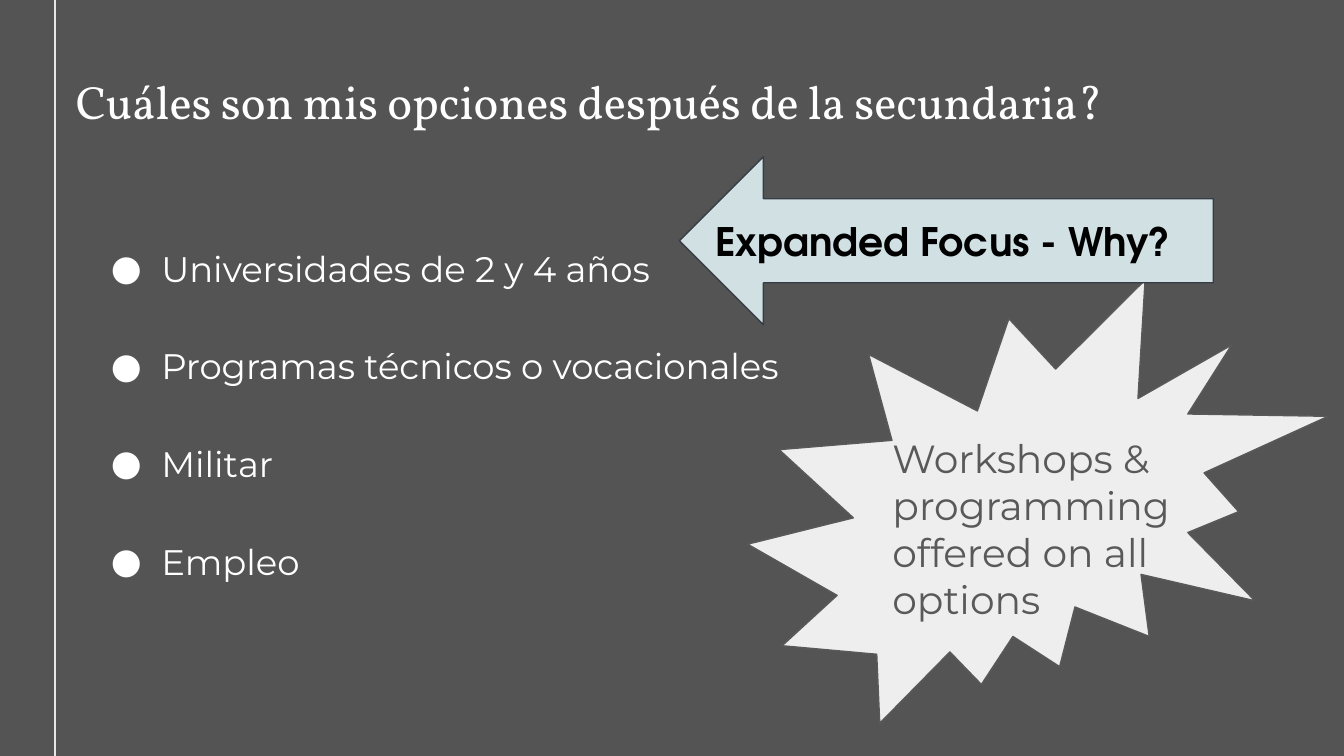
from lxml.etree import SubElement
from pptx import Presentation
from pptx.dml.color import RGBColor
from pptx.enum.shapes import MSO_CONNECTOR, MSO_SHAPE
from pptx.enum.text import MSO_ANCHOR, MSO_AUTO_SIZE, PP_ALIGN
from pptx.oxml.ns import qn
from pptx.util import Pt

HUES = {
    "back": "545454",
    "rule": "E6E6E4",
    "light": "FFFFFF",
    "burst": "EEEEEE",
    "grey": "595959",
    "arrow": "D0E0E3",
    "edge": "363D46",
    "dark": "000000",
}
ITEMS = [
    "Universidades de 2 y 4 años",
    "Programas técnicos o vocacionales",
    "Militar",
    "Empleo",
]


def tint(name):
    return RGBColor.from_string(HUES[name])


def place(shape, left, top, width, height):
    shape.left, shape.top = Pt(left), Pt(top)
    shape.width, shape.height = Pt(width), Pt(height)


def set_frame(shape, inset):
    frame = shape.text_frame
    frame.word_wrap = True
    frame.auto_size = MSO_AUTO_SIZE.NONE
    frame.vertical_anchor = MSO_ANCHOR.TOP
    frame.margin_left = frame.margin_right = Pt(inset)
    frame.margin_top = frame.margin_bottom = Pt(inset)
    return frame


def style(line, face, size, hue, bold=False):
    line.alignment = PP_ALIGN.LEFT
    for run in line.runs:
        font = run.font
        font.name, font.size, font.bold = face, Pt(size), bold
        font.color.rgb = tint(hue)


def add_bullet(line):
    props = line._p.get_or_add_pPr()
    props.set("marL", str(Pt(36)))
    props.set("indent", str(-Pt(27)))
    color = SubElement(props, qn("a:buClr"))
    SubElement(color, qn("a:srgbClr"), val=HUES["light"])
    SubElement(props, qn("a:buFont"), typeface="Montserrat")
    SubElement(props, qn("a:buChar"), char="●")


def add_rule(slide, x, height):
    rule = slide.shapes.add_connector(
        MSO_CONNECTOR.STRAIGHT, Pt(x), Pt(0), Pt(x), Pt(height))
    rule.line.color.rgb = tint("rule")
    rule.line.width = Pt(0.75)
    SubElement(rule._element.spPr, qn("a:effectLst"))


def set_title(shape, text):
    place(shape, 40.6, 34.6, 594, 84)
    frame = set_frame(shape, 0)
    frame.text = text
    line = frame.paragraphs[0]
    line.line_spacing = 1.15
    style(line, "Vollkorn", 25, "light")


def set_list(shape, items):
    place(shape, 43.2, 125, 615.6, 219)
    frame = set_frame(shape, 7.2)
    frame.text = "\n".join(items)
    for index, line in enumerate(frame.paragraphs):
        line.space_before = Pt(29.5 if index else 0)
        add_bullet(line)
        style(line, "Montserrat", 19, "light")


def add_form(slide, kind, box, fill, edge):
    form = slide.shapes.add_shape(kind, *map(Pt, box))
    form.shadow.inherit = False
    form.fill.solid()
    form.fill.fore_color.rgb = tint(fill)
    form.line.color.rgb = tint(edge)
    form.line.width = Pt(0.75)


def add_note(slide, box, text, face, hue, bold=False):
    frame = set_frame(slide.shapes.add_textbox(*map(Pt, box)), 7.2)
    frame.text = text
    style(frame.paragraphs[0], face, 21, hue, bold)


def main():
    deck = Presentation()
    deck.slide_width, deck.slide_height = Pt(720), Pt(405)
    slide = deck.slides.add_slide(deck.slide_layouts[1])
    slide.background.fill.solid()
    slide.background.fill.fore_color.rgb = tint("back")
    title, body = slide.placeholders
    set_title(title, "Cuáles son mis opciones después de la secundaria?")
    set_list(body, ITEMS)
    add_rule(slide, 29.5, 405)
    add_form(slide, MSO_SHAPE.EXPLOSION2, (400.5, 150, 311, 237.5),
             "burst", "grey")
    add_note(slide, (471, 225.4, 181.4, 58.3),
             "Workshops & programming offered on all options",
             "Montserrat", "grey")
    add_form(slide, MSO_SHAPE.LEFT_ARROW, (364, 84, 286, 90),
             "arrow", "edge")
    add_note(slide, (376, 109.4, 277, 40.3), "Expanded Focus - Why?",
             "TeX Gyre Adventor", "dark", True)
    deck.save("out.pptx")


if __name__ == "__main__":
    main()
